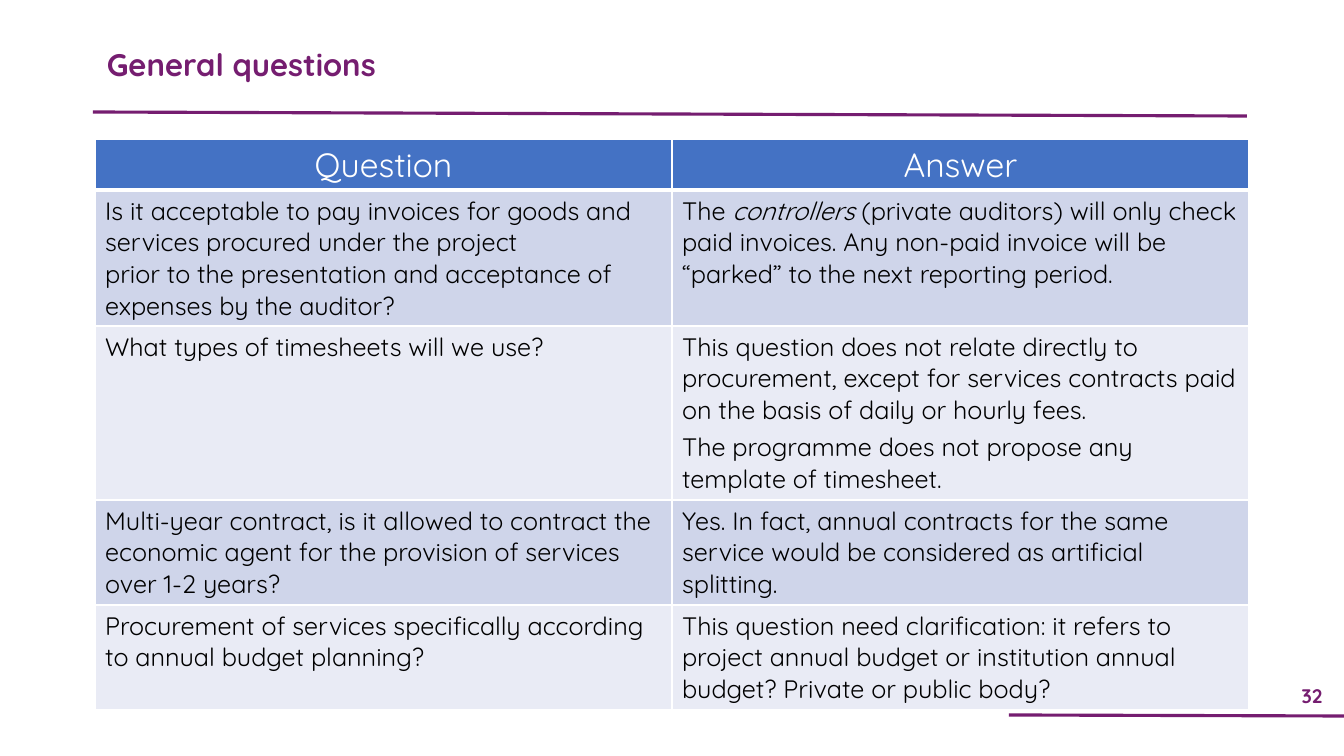
"""Build the slide of general questions and answers about procurement."""
from lxml import etree
from pptx import Presentation
from pptx.dml.color import RGBColor
from pptx.enum.shapes import MSO_CONNECTOR as CONNECTOR
from pptx.enum.text import MSO_ANCHOR as ANCHOR, PP_ALIGN as ALIGN
from pptx.oxml.ns import qn
from pptx.util import Pt

EMU_PER_PX = 914400 / 100.8
FONT = "Quicksand"
PURPLE, WHITE, BLACK = "751D70", "FFFFFF", "000000"
HEADER_BLUE = "4472C4"
BANDS = ("CFD5EA", "E9EBF5")
COLUMN_WIDTH = 577
ROW_HEIGHTS = (51, 136, 174, 105, 105)
HEADINGS = ("Question", "Answer")
QUESTIONS_AND_ANSWERS = (
    (("Is it acceptable to pay invoices for goods and services procured under the project",
      "prior to the presentation and acceptance of expenses by the auditor?"),
     ("The *controllers* (private auditors) will only check paid invoices. "
      "Any non-paid invoice will be “parked” to the next reporting period.",)),
    (("What types of timesheets will we use?",),
     ("This question does not relate directly to procurement, except for services "
      "contracts paid on the basis of daily or hourly fees.",
      "The programme does not propose any template of timesheet.")),
    (("Multi-year contract, is it allowed to contract the economic agent for the "
      "provision of services over 1-2 years?",),
     ("Yes. In fact, annual contracts for the same service would be considered as "
      "artificial splitting.",)),
    (("Procurement of services specifically according to annual budget planning?",),
     ("This question need clarification: it refers to project annual budget or "
      "institution annual budget? Private or public body?",)),
)


def px(length):
    """Turn pixels into EMU."""
    return round(length * EMU_PER_PX)


def colour(value):
    """Turn a hex string into a colour."""
    return RGBColor.from_string(value)


def style(paragraph, size, hex_colour, align, bold=False):
    """Set the font and alignment of a paragraph."""
    paragraph.alignment = align
    font = paragraph.font
    font.name, font.size, font.bold = FONT, Pt(size), bold
    font.color.rgb = colour(hex_colour)


def add_rule(slide, start, end):
    """Draw a purple rule between two points."""
    rule = slide.shapes.add_connector(CONNECTOR.STRAIGHT, *map(px, start + end))
    rule.line.color.rgb = colour(PURPLE)
    rule.line.width = Pt(2.25)
    etree.SubElement(rule._element.spPr, qn("a:effectLst"))


def add_label(slide, box, text, size, align, anchor):
    """Add a bold purple line of text and return its paragraph."""
    frame = slide.shapes.add_textbox(*map(px, box)).text_frame
    frame.word_wrap = True
    frame.vertical_anchor = anchor
    label = frame.paragraphs[0]
    label.text = text
    style(label, size, PURPLE, align, bold=True)
    return label


def add_borders(cell, bottom):
    """Give a cell white borders, with its own width at the bottom."""
    properties = cell._tc.get_or_add_tcPr()
    for place, (side, width) in enumerate(zip("LRTB", (1, 1, 1, bottom))):
        border = etree.Element(qn(f"a:ln{side}"), w=str(Pt(width)))
        fill = etree.SubElement(border, qn("a:solidFill"))
        etree.SubElement(fill, qn("a:srgbClr"), val=WHITE)
        properties.insert(place, border)


def fill_cell(cell, paragraphs, size, text_colour, fill, align, bottom=1):
    """Fill a cell with paragraphs, with words between asterisks in italics."""
    cell.fill.solid()
    cell.fill.fore_color.rgb = colour(fill)
    add_borders(cell, bottom)
    frame = cell.text_frame
    for index, text in enumerate(paragraphs):
        paragraph = frame.add_paragraph() if index else frame.paragraphs[0]
        for part, words in enumerate(text.split("*")):
            run = paragraph.add_run()
            run.text = words
            if part % 2:
                run.font.italic = True
        style(paragraph, size, text_colour, align)


def add_questions_table(slide):
    """Add the table of questions and answers."""
    table = slide.shapes.add_table(
        len(ROW_HEIGHTS), len(HEADINGS), px(95), px(139),
        px(COLUMN_WIDTH * len(HEADINGS)), px(sum(ROW_HEIGHTS))).table
    for column in table.columns:
        column.width = px(COLUMN_WIDTH)
    for row, height in zip(table.rows, ROW_HEIGHTS):
        row.height = px(height)
    for column, heading in enumerate(HEADINGS):
        fill_cell(table.cell(0, column), (heading,), 24, WHITE, HEADER_BLUE,
                  ALIGN.CENTER, bottom=3)
    for row, pair in enumerate(QUESTIONS_AND_ANSWERS):
        for column, paragraphs in enumerate(pair):
            fill_cell(table.cell(row + 1, column), paragraphs, 18, BLACK,
                      BANDS[row % 2], ALIGN.LEFT)
    timesheet_answer = table.cell(2, 1).text_frame.paragraphs[0]
    timesheet_answer.space_after = Pt(4)


def main():
    """Build and save the slide."""
    deck = Presentation()
    deck.slide_width, deck.slide_height = px(1344), px(756)
    slide = deck.slides.add_slide(deck.slide_layouts[6])
    add_rule(slide, (93, 112), (1247, 116))
    add_label(slide, (1280, 678, 64, 36), "32", 14, ALIGN.CENTER, ANCHOR.MIDDLE)
    add_rule(slide, (1009, 715), (1344, 716))
    title = add_label(slide, (97, 48, 981, 42), "General questions", 22.2,
                      ALIGN.JUSTIFY, ANCHOR.TOP)
    title.line_spacing = 0.8
    add_questions_table(slide)
    deck.save("out.pptx")


if __name__ == "__main__":
    main()
